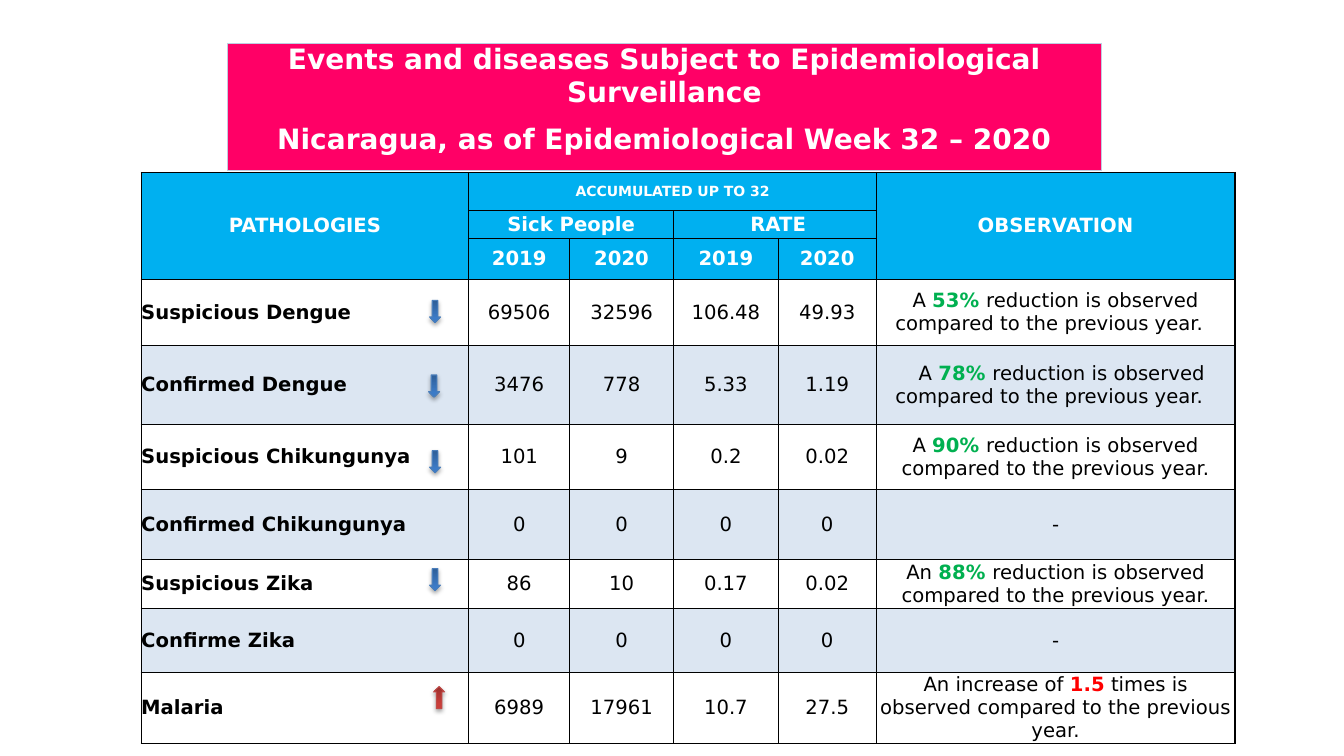
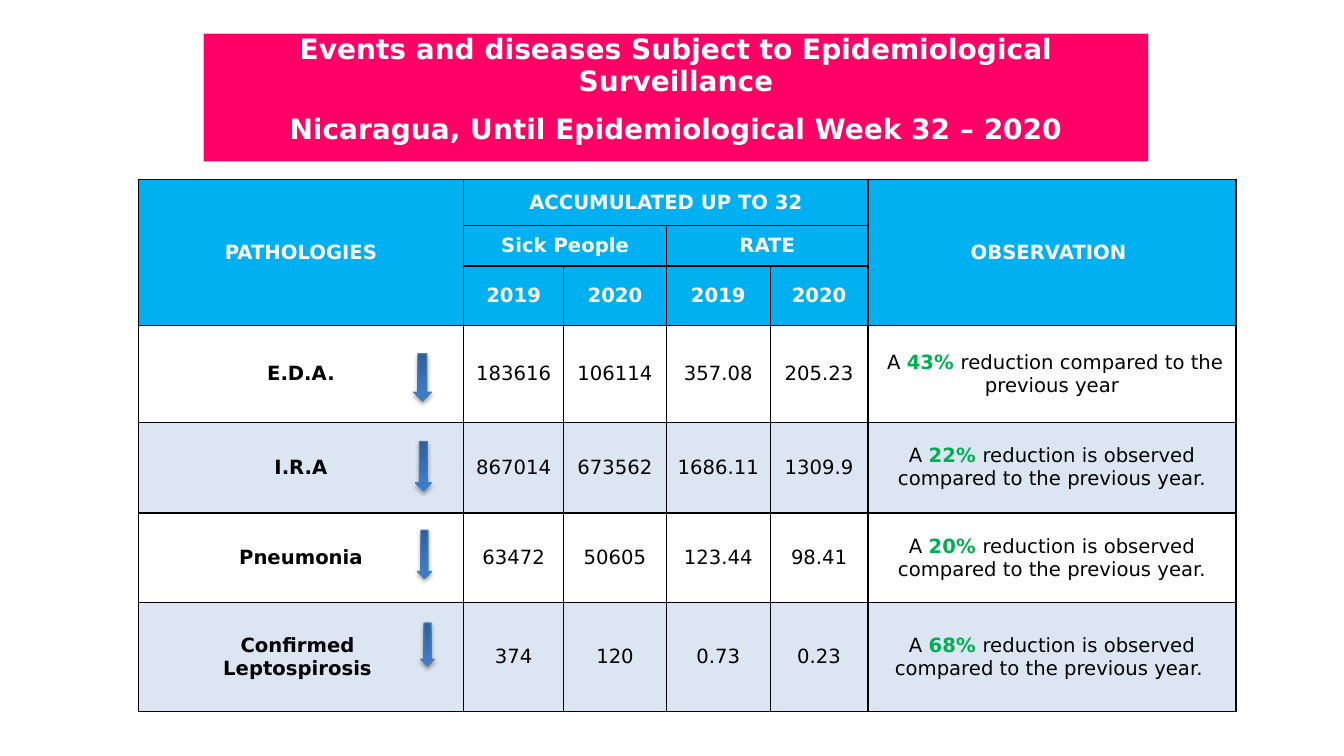
"""Build two slides of epidemiological surveillance tables."""
from lxml import etree
from pptx import Presentation
from pptx.dml.color import RGBColor
from pptx.enum.shapes import MSO_SHAPE
from pptx.enum.text import MSO_ANCHOR, PP_ALIGN
from pptx.oxml import parse_xml
from pptx.oxml.ns import nsdecls, qn
from pptx.util import Emu, Pt

DOWN, UP = MSO_SHAPE.DOWN_ARROW, MSO_SHAPE.UP_ARROW
LEFT, CENTER = PP_ALIGN.LEFT, PP_ALIGN.CENTER
MIDDLE = MSO_ANCHOR.MIDDLE

EMU_PER_PX = 9144
FONT = "DejaVu Sans"
WHITE, BLACK = "FFFFFF", "000000"
PINK, BLUE, BAND, BANNER_LINE = "FF0066", "00B0F0", "DCE6F2", "C0CCE1"
GREEN, RED = "00B050", "FF0000"
ARROW_COLORS = {DOWN: ("2E5E97", "3C7BC7", "4A7EBB"), UP: ("9A2F2C", "CA3E3A", "BE4B48")}
ALL_SIDES = ("lnL", "lnR", "lnT", "lnB")
BANNER_SIDES = (("lnL", "lnR", "lnT"), ("lnL", "lnR", "lnB"))
HEADER_ROWS = 3
TITLE = "Events and diseases Subject to Epidemiological Surveillance"
HEADER = [
    (0, 0, 2, 0, "PATHOLOGIES"),
    (0, 1, 0, 4, "ACCUMULATED UP TO 32"),
    (0, 5, 2, 5, "OBSERVATION"),
    (1, 1, 1, 2, "Sick People"),
    (1, 3, 1, 4, "RATE"),
    (2, 1, 2, 1, "2019"),
    (2, 2, 2, 2, "2020"),
    (2, 3, 2, 3, "2019"),
    (2, 4, 2, 4, "2020"),
]
REDUCED = "reduction is observed compared to the previous year."

SLIDES = [
    {
        "period": "Nicaragua, as of Epidemiological Week 32 – 2020",
        "banner_at": (226, 43),
        "banner_width": 866,
        "banner_rows": [65, 61],
        "table_at": (140, 171),
        "columns": [325, 100, 103, 104, 97, 356],
        "rows": [38, 28, 40, 66, 78, 65, 69, 49, 63, 71],
        "total_size": 10,
        "labels": {"RATE": " RATE"},
        "name_align": LEFT,
        "diseases": [
            ("Suspicious Dengue", "69506", "32596", "106.48", "49.93",
             ("A ", "53% ", REDUCED + "  ")),
            ("Confirmed Dengue", "3476", "778", "5.33", "1.19",
             ("  A ", "78% ", REDUCED + "  ")),
            ("Suspicious Chikungunya", "101", "9", "0.2", "0.02", ("A ", "90% ", REDUCED)),
            ("Confirmed Chikungunya", "0", "0", "0", "0", ("-",)),
            ("Suspicious Zika", "86", "10", "0.17", "0.02", ("An ", "88% ", REDUCED)),
            ("Confirme Zika", "0", "0", "0", "0", ("-",)),
            ("Malaria", "6989", "17961", "10.7", "27.5",
             ("An increase of ", "1.5", " times is observed compared to the previous year.")),
        ],
        "arrows": [
            (DOWN, 426, 298, 11, 22),
            (DOWN, 425, 372, 11, 22),
            (DOWN, 426, 447, 11, 22),
            (DOWN, 426, 564, 11, 22),
            (UP, 430, 681, 11, 22),
        ],
    },
    {
        "period": "Nicaragua, Until Epidemiological Week 32 – 2020",
        "banner_at": (202, 33),
        "banner_width": 937,
        "banner_rows": [64, 63],
        "table_at": (137, 178),
        "columns": [323, 99, 102, 103, 97, 365],
        "rows": [46, 40, 59, 96, 90, 89, 108],
        "total_size": 14,
        "labels": {"OBSERVATION": "OBSERVATION "},
        "name_align": CENTER,
        "diseases": [
            ("E.D.A.", "183616", "106114", "357.08", "205.23",
             (" A ", "43% ", "reduction compared to the previous year")),
            ("I.R.A", "867014", "673562", "1686.11", "1309.9", ("A ", "22% ", REDUCED)),
            ("Pneumonia", "63472", "50605", "123.44", "98.41", ("A ", "20% ", REDUCED)),
            ("Confirmed \nLeptospirosis ", "374", "120", "0.73", "0.23",
             ("A ", "68% ", REDUCED + " ")),
        ],
        "arrows": [
            (DOWN, 414, 526, 14, 48),
            (DOWN, 410, 351, 18, 47),
            (DOWN, 417, 618, 14, 43),
            (DOWN, 412, 438, 16, 49),
        ],
    },
]


def px(length):
    return Emu(length * EMU_PER_PX)


def color(value):
    return RGBColor.from_string(value)


def style(frame, size, text_color, bold, align=CENTER):
    for para in frame.paragraphs:
        para.alignment = align
        para.font.name = FONT
        para.font.size = Pt(size)
        para.font.bold = bold
        para.font.color.rgb = color(text_color)


def format_cell(cell, fill, sides, line, width, margin=0):
    properties = cell._tc.get_or_add_tcPr()
    for side in ALL_SIDES:
        paint = f'<a:solidFill><a:srgbClr val="{line}"/></a:solidFill>'
        properties.append(parse_xml(
            f'<a:{side} {nsdecls("a")} w="{Pt(width)}">'
            f'{paint if side in sides else "<a:noFill/>"}</a:{side}>'))
    if fill:
        cell.fill.solid()
        cell.fill.fore_color.rgb = color(fill)
    else:
        cell.fill.background()
    cell.vertical_anchor = MIDDLE
    cell.margin_left = cell.margin_right = px(margin)
    cell.margin_top = cell.margin_bottom = px(margin)


def add_sized_table(page, place, columns, rows):
    table = page.shapes.add_table(
        len(rows), len(columns), *map(px, (*place, sum(columns), sum(rows)))).table
    table.horz_banding = False
    for column, width in zip(table.columns, columns):
        column.width = px(width)
    for row, height in zip(table.rows, rows):
        row.height = px(height)
    return table


def add_banner(page, content):
    table = add_sized_table(
        page, content["banner_at"], [content["banner_width"]], content["banner_rows"])
    for row, text in enumerate((TITLE, content["period"])):
        cell = table.cell(row, 0)
        format_cell(cell, PINK, BANNER_SIDES[row], BANNER_LINE, 0.75)
        cell.text = text
        style(cell.text_frame, 20, WHITE, True)


def add_observation(cell, parts):
    para = cell.text_frame.paragraphs[0]
    for index, text in enumerate(parts):
        span = para.add_run()
        span.text = text
        if index == 1:
            span.font.bold = True
            span.font.color.rgb = color(GREEN if "%" in text else RED)
    style(cell.text_frame, 14, BLACK, False)


def add_disease_table(page, content):
    table = add_sized_table(page, content["table_at"], content["columns"], content["rows"])
    for index, row in enumerate(table.rows):
        is_header = index < HEADER_ROWS
        fill = BLUE if is_header else (BAND if index % 2 == 0 else None)
        for column, cell in enumerate(row.cells):
            margin = 0 if is_header or column == 0 else 1
            format_cell(cell, fill, ALL_SIDES, BLACK, 1, margin)

    for first_row, first_column, last_row, last_column, text in HEADER:
        cell = table.cell(first_row, first_column)
        if (first_row, first_column) != (last_row, last_column):
            cell.merge(table.cell(last_row, last_column))
        cell.text = content["labels"].get(text, text)
        is_total = (first_row, first_column) == (0, 1)
        style(cell.text_frame, content["total_size"] if is_total else 14, WHITE, True)

    for row, (name, *values, observation) in enumerate(content["diseases"], HEADER_ROWS):
        cell = table.cell(row, 0)
        cell.text = name
        style(cell.text_frame, 14, BLACK, True, content["name_align"])
        for column, value in enumerate(values, 1):
            cell = table.cell(row, column)
            cell.text = value
            style(cell.text_frame, 14, BLACK, False)
        add_observation(table.cell(row, len(values) + 1), observation)


def add_trend_arrow(page, kind, *place):
    arrow = page.shapes.add_shape(kind, *map(px, place))
    start, end, outline = ARROW_COLORS[kind]
    arrow.fill.gradient()
    arrow.fill.gradient_angle = 270
    for stop, position, value in zip(arrow.fill.gradient_stops, (0, 0.8), (start, end)):
        stop.position = position
        stop.color.rgb = color(value)
    arrow.line.color.rgb = color(outline)
    arrow.line.width = Pt(0.75)
    arrow.shadow.inherit = False
    effects = arrow._element.spPr.find(qn("a:effectLst"))
    shadow = etree.SubElement(
        effects, qn("a:outerShdw"), blurRad=str(Pt(3)), dist=str(Pt(1.8)),
        dir="5400000", rotWithShape="0")
    shade = etree.SubElement(shadow, qn("a:srgbClr"), val=BLACK)
    etree.SubElement(shade, qn("a:alpha"), val="35000")


def main():
    deck = Presentation()
    deck.slide_width, deck.slide_height = px(1333), px(750)
    blank = deck.slide_layouts[6]
    for content in SLIDES:
        page = deck.slides.add_slide(blank)
        add_disease_table(page, content)
        add_banner(page, content)
        for arrow in content["arrows"]:
            add_trend_arrow(page, *arrow)
    deck.save("out.pptx")


if __name__ == "__main__":
    main()
